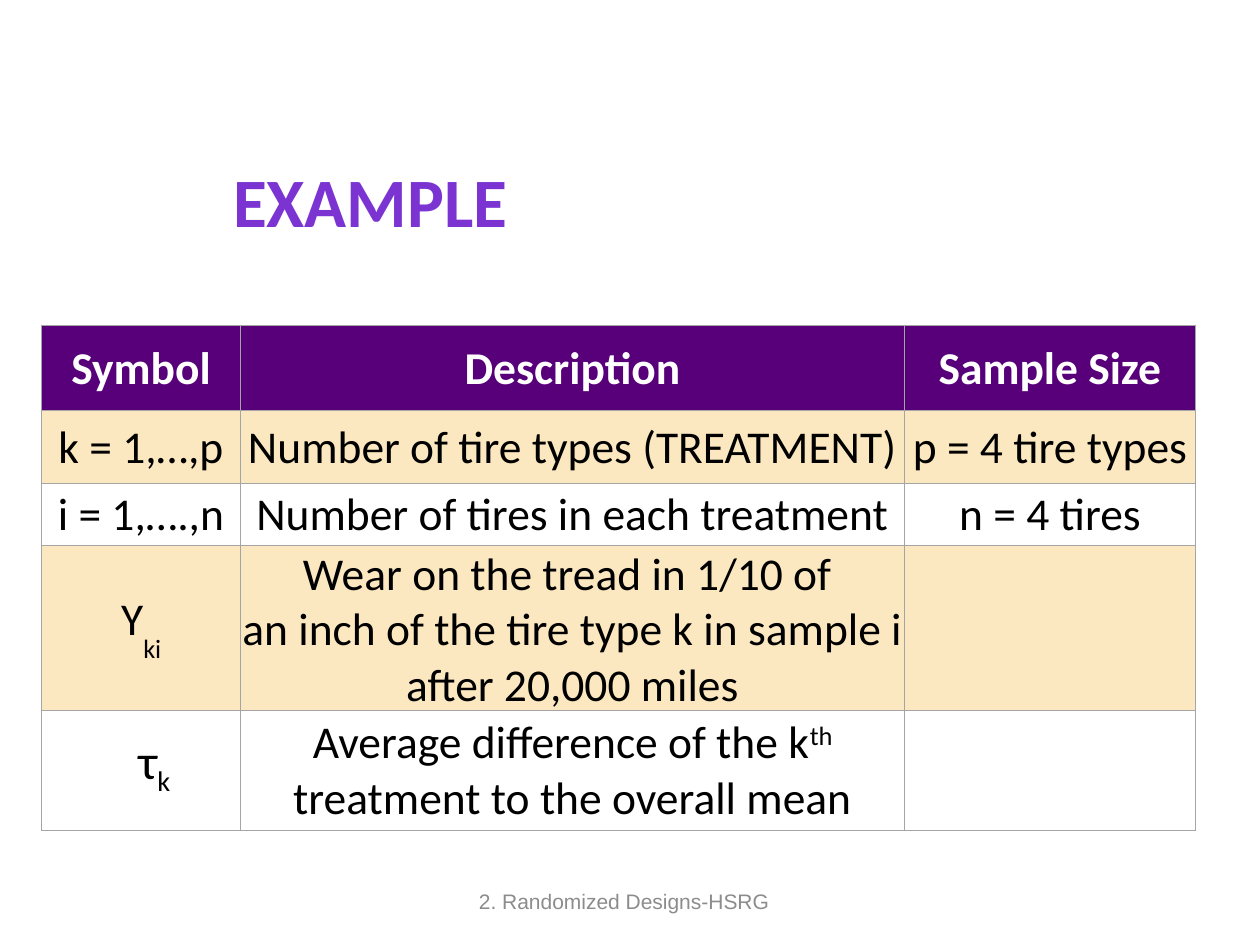
"""Build the EXAMPLE slide: symbols, descriptions and sample sizes of a tire design."""
from lxml.etree import SubElement
from pptx import Presentation
from pptx.dml.color import RGBColor
from pptx.enum.text import MSO_ANCHOR, PP_ALIGN
from pptx.oxml import parse_xml
from pptx.oxml.ns import nsdecls
from pptx.util import Inches, Pt

COLORS = {"title": "7B34D2", "head": "57007A", "band": "FCE8C0", "border": "A5A5A5",
          "white": "FFFFFF", "black": "000000", "footer": "8C8C8C"}

TITLE = [[("EXAMPLE", 0)]]
FOOTER = [[("2. Randomized Designs-HSRG", 0)]]
TAU = [[("τ", 0), ("k", -25)]]
ROWS = [
    ["Symbol", "Description", "Sample Size"],
    ["k = 1,…,p", "Number of tire types (TREATMENT)", "p = 4 tire types"],
    ["i = 1,….,n", "Number of tires in each treatment", "n = 4 tires"],
    [[[("Y", 0), ("ki", -50)]],
     [[("Wear on the tread in 1/10 of ", 0)],
      [("an inch of the tire type k in sample i ", 0)],
      [("after 20,000 miles", 0)]], ""],
    ["", [[("Average difference of the k", 0), ("th", 30),
           (" treatment to the overall mean", 0)]], ""],
]
COL_WIDTHS = [1.58, 5.27, 2.31]
ROW_HEIGHTS = [0.68, 0.58, 0.49, 1.28, 0.95]

CELL_FORMAT = {"vertical_anchor": MSO_ANCHOR.MIDDLE, "margin_left": Inches(0.01),
               "margin_right": Inches(0.01), "margin_top": Inches(0.01), "margin_bottom": 0}


def set_attrs(obj, values):
    for name, value in values.items():
        setattr(obj, name, value)


def write(tf, paragraphs, color, align=PP_ALIGN.LEFT, **font):
    for i, runs in enumerate(paragraphs):
        p = tf.paragraphs[0] if i == 0 else tf.add_paragraph()
        p.alignment = align
        for text, baseline in runs:
            r = p.add_run()
            r.text = text
            set_attrs(r.font, font)
            r.font.color.rgb = RGBColor.from_string(COLORS[color])
            if baseline:
                r.font._element.set("baseline", str(baseline * 1000))


def place(sp, left, top, width, height):
    set_attrs(sp, {"left": Inches(left), "top": Inches(top),
                   "width": Inches(width), "height": Inches(height)})


def add_text(s, box, paragraphs, color, anchor, align=PP_ALIGN.LEFT, right=0.1, **font):
    tf = s.shapes.add_textbox(*map(Inches, box)).text_frame
    set_attrs(tf, {"word_wrap": True, "vertical_anchor": anchor, "margin_right": Inches(right)})
    write(tf, paragraphs, color, align, **font)


def add_borders(cell):
    tc_pr = cell._tc.get_or_add_tcPr()
    for i, side in enumerate(("lnL", "lnR", "lnT", "lnB")):
        ln = parse_xml(f'<a:{side} {nsdecls("a")} w="{Pt(0.5)}"><a:solidFill>'
                       f'<a:srgbClr val="{COLORS["border"]}"/></a:solidFill></a:{side}>')
        tc_pr.insert(i, ln)


def fill_cell(cell, content, row):
    set_attrs(cell, CELL_FORMAT)
    if row % 2 and row or row == 0:
        cell.fill.solid()
        cell.fill.fore_color.rgb = RGBColor.from_string(COLORS["band" if row else "head"])
    else:
        cell.fill.background()
    add_borders(cell)
    if content:
        paragraphs = [[(content, 0)]] if isinstance(content, str) else content
        write(cell.text_frame, paragraphs, "black" if row else "white", PP_ALIGN.CENTER,
              name="Calibri", size=Pt(26), bold=row == 0)


def add_symbol_table(s):
    frame = s.shapes.add_table(len(ROWS), len(COL_WIDTHS), Inches(0.33), Inches(2.58),
                               Inches(sum(COL_WIDTHS)), Inches(sum(ROW_HEIGHTS)))
    table = frame.table
    for col, width in zip(table.columns, COL_WIDTHS):
        col.width = Inches(width)
    for i, (row, height) in enumerate(zip(table.rows, ROW_HEIGHTS)):
        row.height = Inches(height)
        for cell, content in zip(row.cells, ROWS[i]):
            fill_cell(cell, content, i)


def main():
    prs = Presentation()
    set_attrs(prs, {"slide_width": Inches(10), "slide_height": Inches(7.5)})
    s = prs.slides.add_slide(prs.slide_layouts[5])
    title = s.shapes.title
    place(title, 1.75, 1.25, 6.83, 0.67)
    title.text_frame.vertical_anchor = MSO_ANCHOR.MIDDLE
    write(title.text_frame, TITLE, "title", name="Calibri", size=Pt(39.6), bold=True)
    add_text(s, (3.42, 6.95, 3.17, 0.4), FOOTER, "footer", MSO_ANCHOR.MIDDLE,
             PP_ALIGN.CENTER, right=0.2, name="Arial", size=Pt(12))
    add_symbol_table(s)
    add_text(s, (1, 5.75, 0.67, 0.88), TAU, "black", MSO_ANCHOR.TOP,
             name="Calibri", size=Pt(28))
    prs.save("out.pptx")


if __name__ == "__main__":
    main()
